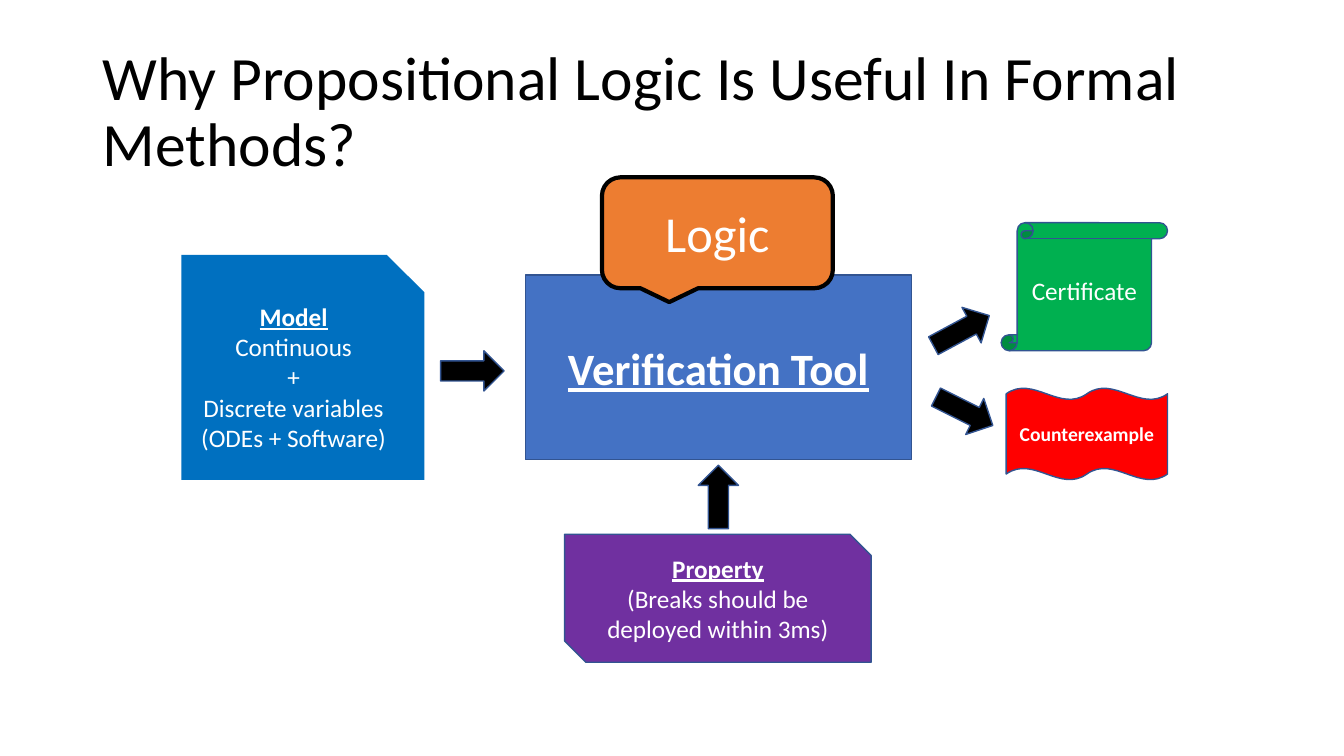
from pptx import Presentation
from pptx.dml.color import RGBColor
from pptx.enum import shapes, text
from pptx.util import Inches, Pt

BLACK = RGBColor(0x00, 0x00, 0x00)
WHITE = RGBColor(0xFF, 0xFF, 0xFF)
BLUE = RGBColor(0x44, 0x72, 0xC4)
EDGE = RGBColor(0x32, 0x54, 0x91)
MODEL_BLUE = RGBColor(0x00, 0x70, 0xC0)
PURPLE = RGBColor(0x70, 0x30, 0xA0)
GREEN = RGBColor(0x00, 0xB0, 0x50)
RED = RGBColor(0xFF, 0x00, 0x00)
ORANGE = RGBColor(0xED, 0x7D, 0x31)

MSO = shapes.MSO_SHAPE
HEADING = {"bold": True, "underline": True}

prs = Presentation()
prs.slide_width, prs.slide_height = Inches(13.33), Inches(7.5)
s = prs.slides.add_slide(prs.slide_layouts[6])


def add_shape(kind, box, fill, line=EDGE, width=1):
    sp = s.shapes.add_shape(kind, *[Inches(v) for v in box])
    sp.shadow.inherit = False
    sp.fill.solid()
    sp.fill.fore_color.rgb = fill
    if line is None:
        sp.line.fill.background()
    else:
        sp.line.color.rgb = line
        sp.line.width = Pt(width)
    return sp


def write(sp, lines, size, color=WHITE, align=text.PP_ALIGN.CENTER):
    tf = sp.text_frame
    tf.word_wrap = True
    tf.vertical_anchor = text.MSO_ANCHOR.MIDDLE
    for i, (words, style) in enumerate(lines):
        p = tf.add_paragraph() if i else tf.paragraphs[0]
        p.alignment = align
        r = p.add_run()
        r.text = words
        r.font.color.rgb = color
        for name, value in {"name": "Calibri", "size": Pt(size), **style}.items():
            setattr(r.font, name, value)


# Title
title = s.shapes.add_textbox(Inches(0.92), Inches(0.4), Inches(11.5), Inches(1.45))
write(title, [("Why Propositional Logic Is Useful In Formal Methods?", {})],
      44, BLACK, text.PP_ALIGN.LEFT)
title.text_frame.paragraphs[0].line_spacing = 0.9

# Tool, its inputs and its outcomes, with the logic callout on top
blocks = [
    (MSO.RECTANGLE, (5.21, 2.73, 3.83, 1.83), BLUE, EDGE, 1, 32,
     [("Verification Tool", HEADING)]),
    (MSO.SNIP_1_RECTANGLE, (1.8, 2.53, 2.41, 2.23), MODEL_BLUE, None, 0, 18,
     [("Model", HEADING), ("Continuous", {}), ("+", {}),
      ("Discrete variables", {}), ("(ODEs + Software)", {})]),
    (MSO.SNIP_2_DIAG_RECTANGLE, (5.6, 5.3, 3.04, 1.27), PURPLE, EDGE, 1, 18,
     [("Property", HEADING), ("(Breaks should be deployed within 3ms)", {})]),
    (MSO.VERTICAL_SCROLL, (9.93, 2.21, 1.65, 1.27), GREEN, EDGE, 1, 18,
     [("Certificate", {})]),
    (MSO.DOUBLE_WAVE, (9.98, 3.85, 1.6, 0.91), RED, EDGE, 1, 14,
     [("Counterexample", {"bold": True})]),
    (MSO.ROUNDED_RECTANGULAR_CALLOUT, (5.97, 1.76, 2.29, 1.1), ORANGE, BLACK, 3, 36,
     [("Logic", {})]),
]
for kind, box, fill, line, width, size, lines in blocks:
    write(add_shape(kind, box, fill, line, width), lines, size)

# Block arrows into and out of the tool
for left, top, angle in [(4.37, 3.48, 0), (6.81, 4.73, 270),
                         (9.22, 3.08, 331.7), (9.25, 3.88, 26.6)]:
    arrow = add_shape(MSO.RIGHT_ARROW, (left, top, 0.63, 0.4), BLACK)
    arrow.rotation = angle

prs.save("out.pptx")
